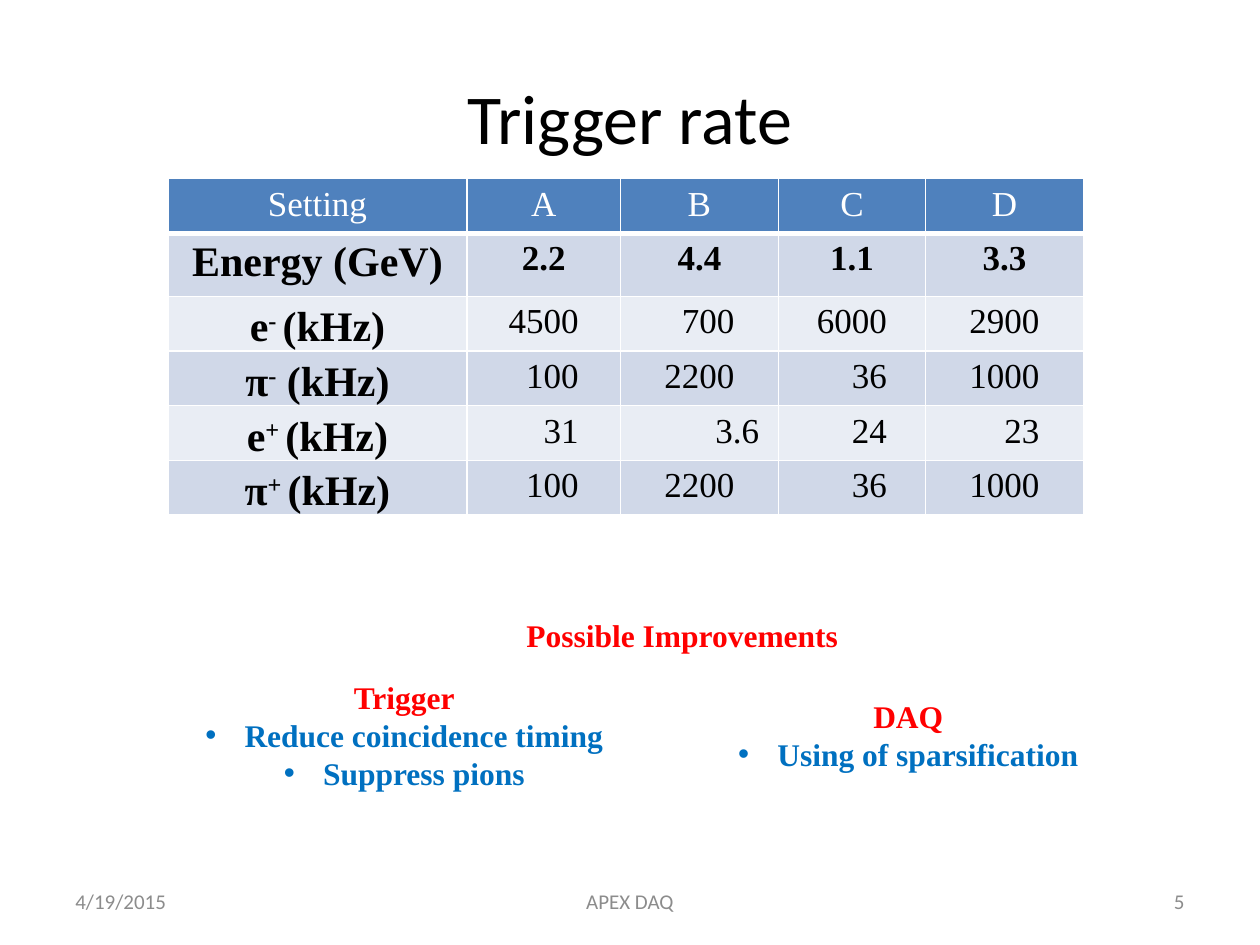
import lxml.etree
import pptx
import pptx.dml.color
import pptx.enum.text
import pptx.oxml.ns
import pptx.util

Cm = pptx.util.Cm
ALIGN = pptx.enum.text.PP_ALIGN
ANCHOR = pptx.enum.text.MSO_ANCHOR
qn = pptx.oxml.ns.qn

SERIF = "Times New Roman"
SANS = "Calibri"
COLUMN_WIDTHS = [6.02, 3.1, 3.18, 2.97, 3.18]
HEADER_HEIGHT, ROW_HEIGHT = 1.09, 1.04
FOUR_DIGITS_WIDTH = 1.41
SETTINGS = ["Setting", "A", "B", "C", "D"]
ENERGIES = ["Energy (GeV)", "2.2", "4.4", "1.1", "3.3"]
RATES = [
    (("e", "- ", "(kHz)"), ["4500", "700", "6000", "2900"]),
    (("π", "-", " (kHz)"), ["100", "2200", "36", "1000"]),
    (("e", "+ ", "(kHz)"), ["31", "3.6", "24", "23"]),
    (("π", "+ ", "(kHz)"), ["100", "2200", "36", "1000"]),
]


def rgb(value):
    return pptx.dml.color.RGBColor.from_string(value)


def style(paragraph, size, color, font=SERIF, bold=False, align=ALIGN.CENTER):
    paragraph.alignment = align
    paragraph.font.name = font
    paragraph.font.size = pptx.util.Pt(size)
    paragraph.font.bold = bold
    paragraph.font.color.rgb = rgb(color)


def add_frame(slide, left, top, width, height, anchor=ANCHOR.TOP):
    box = slide.shapes.add_textbox(Cm(left), Cm(top), Cm(width), Cm(height))
    frame = box.text_frame
    frame.word_wrap = True
    frame.vertical_anchor = anchor
    return frame


def add_line(slide, box, text, size, color, font=SANS, bold=False, align=ALIGN.CENTER):
    line = add_frame(slide, *box, anchor=ANCHOR.MIDDLE).paragraphs[0]
    line.text = text
    style(line, size, color, font, bold, align)


def add_bullet(paragraph):
    properties = paragraph._p.get_or_add_pPr()
    properties.set("marL", str(Cm(0.79)))
    properties.set("indent", str(-Cm(0.79)))
    bullet_font = lxml.etree.Element(qn("a:buFont"), typeface="Arial")
    bullet = lxml.etree.Element(qn("a:buChar"), char="•")
    properties.insert(0, bullet_font)
    properties.insert(1, bullet)


def add_improvements(slide, left, top, width, height, heading, items):
    frame = add_frame(slide, left, top, width, height)
    frame.paragraphs[0].text = heading
    style(frame.paragraphs[0], 18, "FF0000", bold=True)
    for item in items:
        paragraph = frame.add_paragraph()
        paragraph.text = item
        add_bullet(paragraph)
        style(paragraph, 18, "0070C0", bold=True)


def paint_cell(cell, fill, bottom_width=1):
    cell.fill.solid()
    cell.fill.fore_color.rgb = rgb(fill)
    properties = cell._tc.get_or_add_tcPr()
    for index, side in enumerate("LRTB"):
        width = pptx.util.Pt(bottom_width if side == "B" else 1)
        border = lxml.etree.Element(qn(f"a:ln{side}"), w=str(width))
        solid = lxml.etree.SubElement(border, qn("a:solidFill"))
        lxml.etree.SubElement(solid, qn("a:srgbClr"), val="FFFFFF")
        properties.insert(index, border)


def fill_particle(cell, parts):
    cell.vertical_anchor = ANCHOR.BOTTOM
    cell.margin_left = cell.margin_right = cell.margin_top = Cm(0.03)
    cell.margin_bottom = 0
    paragraph = cell.text_frame.paragraphs[0]
    for part in parts:
        paragraph.add_run().text = part
    paragraph.runs[1]._r.get_or_add_rPr().set("baseline", "30000")
    style(paragraph, 24, "000000", bold=True)


def fill_rate(cell, rate, column_width):
    cell.text = rate
    overhang = 0.5 if "." in rate else 0
    cell.margin_right = Cm((column_width - FOUR_DIGITS_WIDTH) / 2 - overhang)
    style(cell.text_frame.paragraphs[0], 20, "000000", align=ALIGN.RIGHT)


def add_rates_table(slide, left, top):
    row_count = len(RATES) + 2
    height = HEADER_HEIGHT + ROW_HEIGHT * (row_count - 1)
    rates = slide.shapes.add_table(
        row_count, len(COLUMN_WIDTHS),
        Cm(left), Cm(top), Cm(sum(COLUMN_WIDTHS)), Cm(height),
    ).table
    for column, width in zip(rates.columns, COLUMN_WIDTHS):
        column.width = Cm(width)
    for index, row in enumerate(rates.rows):
        row.height = Cm(ROW_HEIGHT if index else HEADER_HEIGHT)
        band = "D0D8E8" if index % 2 else "E9EDF4"
        for cell in row.cells:
            paint_cell(cell, band if index else "4F81BD", 1 if index else 3)

    for column, (setting, energy) in enumerate(zip(SETTINGS, ENERGIES)):
        header, value = rates.cell(0, column), rates.cell(1, column)
        header.text, value.text = setting, energy
        style(header.text_frame.paragraphs[0], 20, "FFFFFF")
        style(value.text_frame.paragraphs[0], 20 if column else 24, "000000", bold=True)
    for row, (particle, values) in enumerate(RATES, start=2):
        fill_particle(rates.cell(row, 0), particle)
        for column, rate in enumerate(values, start=1):
            fill_rate(rates.cell(row, column), rate, COLUMN_WIDTHS[column])


def add_footer(slide, left, top, width, height):
    side, middle = 5.92, 8.05
    parts = [
        ("4/19/2015", left, side, ALIGN.LEFT),
        ("APEX DAQ", left + (width - middle) / 2, middle, ALIGN.CENTER),
        ("5", left + width - side, side, ALIGN.RIGHT),
    ]
    for text, part_left, part_width, align in parts:
        add_line(slide, (part_left, top, part_width, height), text, 12, "8C8C8C", align=align)


def main():
    presentation = pptx.Presentation()
    presentation.slide_width = Cm(25.4)
    presentation.slide_height = Cm(19.05)
    slide = presentation.slides.add_slide(presentation.slide_layouts[6])
    add_line(slide, (1.27, 0.76, 22.86, 3.18), "Trigger rate", 40, "000000")
    add_rates_table(slide, 3.39, 3.6)
    add_line(slide, (9.1, 12.28, 9.31, 1.02), "Possible Improvements", 18, "FF0000", SERIF, True)
    add_improvements(slide, 2.54, 13.55, 11.22, 2.57, "Trigger",
                     ["Reduce coincidence timing", "Suppress pions"])
    add_improvements(slide, 12.7, 13.93, 11.22, 1.8, "DAQ", ["Using of sparsification"])
    add_footer(slide, 1.27, 17.65, 22.86, 1.02)
    presentation.save("out.pptx")


if __name__ == "__main__":
    main()
